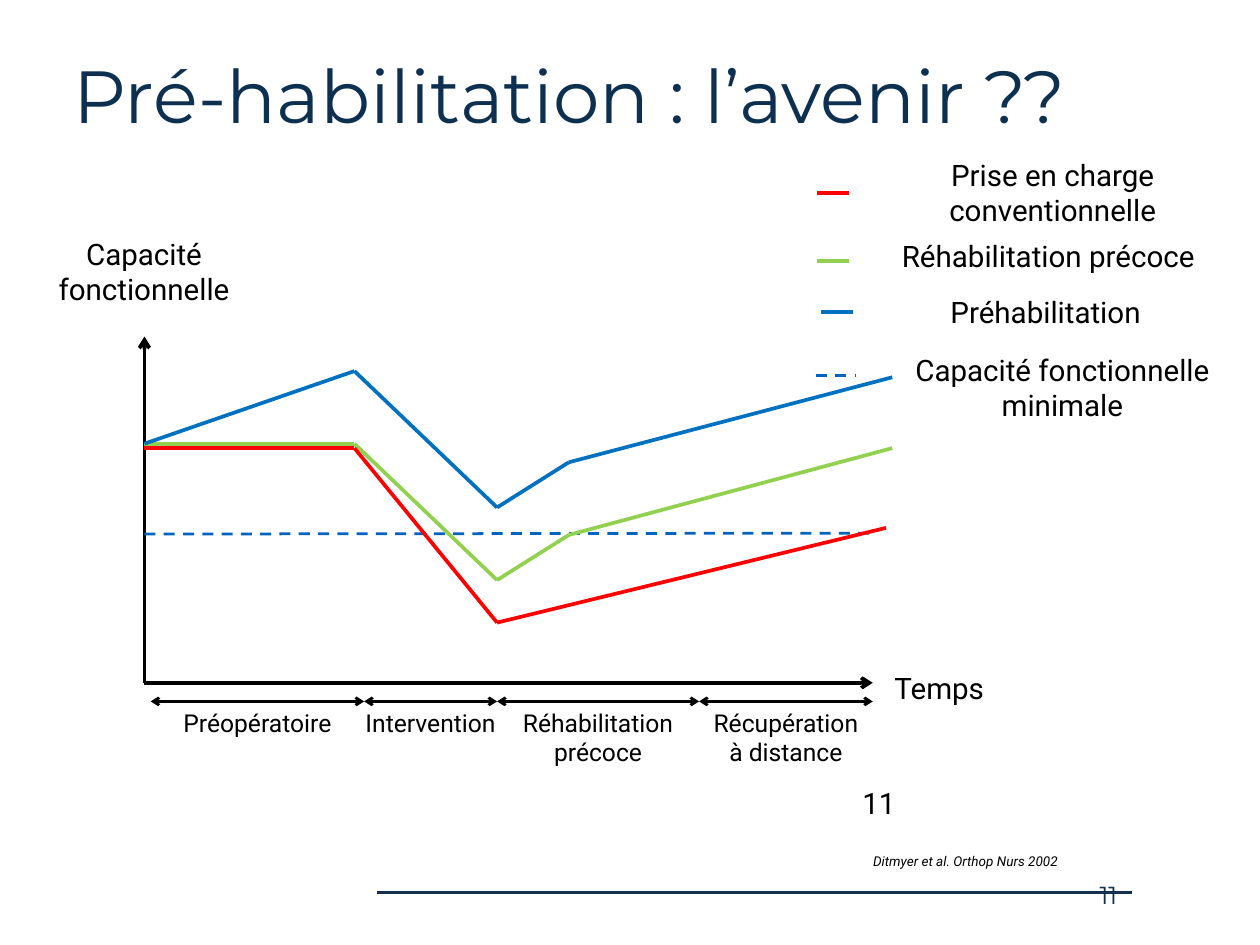
from itertools import pairwise
from lxml.etree import SubElement
from pptx import Presentation
from pptx.dml.color import RGBColor
from pptx.enum.dml import MSO_LINE
from pptx.enum.shapes import MSO_CONNECTOR
from pptx.enum.text import MSO_ANCHOR, PP_ALIGN
from pptx.oxml.ns import qn
from pptx.util import Inches, Pt

WIDE, HIGH = 14.22, 10.67
RED, GREEN, BLUE, DASH = "FF0000", "92D050", "0070C0", "0063BF"
NAVY, INK = "0D3050", "000000"
LEFT, RIGHT, BASE, TOP, SPANS = 1.63, 9.85, 7.71, 3.8, 7.92
START, PEAK, LOW, BEND, END = LEFT, 4, 5.61, 6.42, 10.07

TITLE = "Pré-habilitation : l’avenir ??"
CURVES = [
    (GREEN, [(START, 5.01), (PEAK, 5.01), (LOW, 6.55), (BEND, 6.04), (END, 5.06)]),
    (RED, [(START, 5.06), (PEAK, 5.06), (LOW, 7.03), (10, 5.96)]),
    (BLUE, [(START, 5.01), (PEAK, 4.19), (LOW, 5.73), (BEND, 5.22), (END, 4.26)]),
]
KEYS = [
    ("Prise en charge conventionnelle", RED, 9.22, 2.18, 9.8, 1.72),
    ("Réhabilitation précoce", GREEN, 9.22, 2.95, 9.75, 2.64),
    ("Préhabilitation", BLUE, 9.27, 3.52, 9.72, 3.27),
    ("Capacité fonctionnelle minimale", DASH, 9.21, 4.24, 9.91, 3.92),
]
STOPS = [1.7, 4.11, LOW, 7.89, RIGHT]
PHASES = ["Préopératoire", "Intervention", "Réhabilitation précoce", "Récupération\nà distance"]
NOTES = [
    ("Capacité fonctionnelle", (0.5, 2.61, 2.25, 0.91), {}),
    ("Temps", (9.93, 7.52, 1.34, 0.5), {}),
    ("11", (9.63, 8.81, 0.58, 0.32), {"wrap": False}),
    ("Ditmyer et al. Orthop Nurs 2002", (8.3, 9.58, 3.74, 0.29),
     {"size": 11, "align": PP_ALIGN.RIGHT, "italic": True}),
    ("11", (12.09, 9.87, 0.58, 0.45),
     {"size": 20, "face": "Montserrat", "color": NAVY, "align": PP_ALIGN.RIGHT, "pad": 0.06}),
]

deck = Presentation()
deck.slide_width, deck.slide_height = Inches(WIDE), Inches(HIGH)
slide = deck.slides.add_slide(deck.slide_layouts[5])


def paint(code):
    return RGBColor.from_string(code)


def write(text, area, shape=None, size=24, face="Roboto", color=INK, align=PP_ALIGN.CENTER,
          italic=False, pad=None, wrap=True, anchor=MSO_ANCHOR.TOP):
    spot = [Inches(n) for n in area]
    if shape is None:
        shape = slide.shapes.add_textbox(*spot)
    shape.left, shape.top, shape.width, shape.height = spot
    frame = shape.text_frame
    frame.text = text
    frame.word_wrap = wrap
    frame.vertical_anchor = anchor
    if pad is not None:
        frame.margin_left = frame.margin_right = Inches(pad)
        frame.margin_top = frame.margin_bottom = Inches(pad)
    for para in frame.paragraphs:
        para.alignment = align
        for run in para.runs:
            font = run.font
            font.size, font.name, font.italic = Pt(size), face, italic
            font.color.rgb = paint(color)


def draw(start, end, color=INK, width=3, dash=False, ends=()):
    line = slide.shapes.add_connector(
        MSO_CONNECTOR.STRAIGHT, *[Inches(n) for n in (*start, *end)])
    line.line.color.rgb = paint(color)
    line.line.width = Pt(width)
    if dash:
        line.line.dash_style = MSO_LINE.DASH
    props = line._element.spPr
    for tag in ends:
        SubElement(props.find(qn("a:ln")), qn(tag), type="arrow")
    SubElement(props, qn("a:effectLst"))


HEAD, TAIL = "a:headEnd", "a:tailEnd"

draw((4.26, 10.08), (12.78, 10.08), "11314F", 2)
write(TITLE, (0.77, 0.49, 13.11, 1.15), slide.shapes.title, size=60, face="Montserrat",
      color=NAVY, align=PP_ALIGN.LEFT, pad=0.06, anchor=MSO_ANCHOR.MIDDLE)
for text, area, form in NOTES:
    write(text, area, **form)

for phase, (a, b) in zip(PHASES, pairwise(STOPS)):
    draw((a, SPANS), (b, SPANS), width=2.25, ends=(HEAD, TAIL))
    slack = 0.12 if phase == "Intervention" else 0
    write(phase, (a - slack, 7.94, b - a + 2 * slack, 0.77), size=20)

draw((LEFT, BASE), (LEFT, TOP), ends=(TAIL,))
draw((LEFT, BASE), (RIGHT, BASE), ends=(TAIL,))
draw((LEFT, 6.03), (RIGHT, 6.02), DASH, 2.25, dash=True)

for label, color, x, y, left, top in KEYS:
    least = color == DASH
    draw((x, y), (x + (0.44 if least else 0.36), y), color, 2.25 if least else 3, dash=least)
    write(label, (left, top, 4.16, 0.5), wrap=True)

for color, points in CURVES:
    for a, b in pairwise(points):
        draw(a, b, color)

deck.save("out.pptx")
